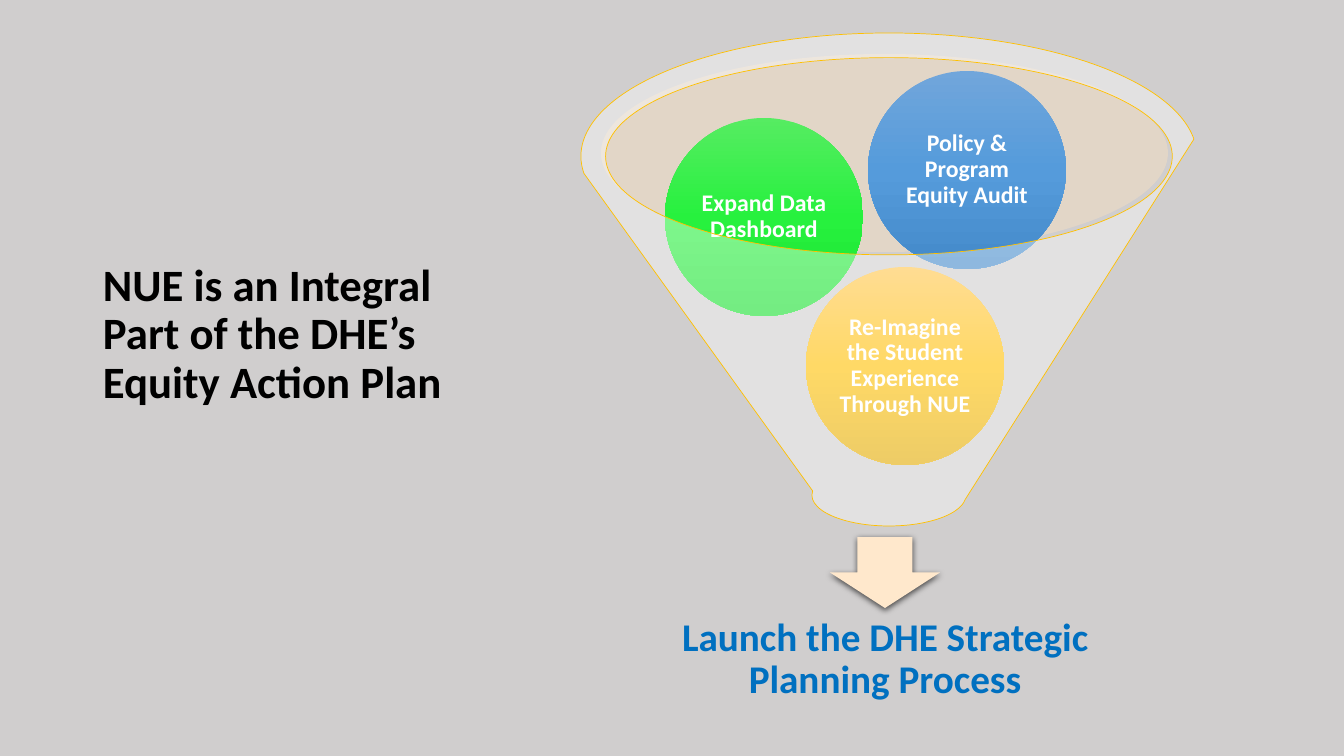
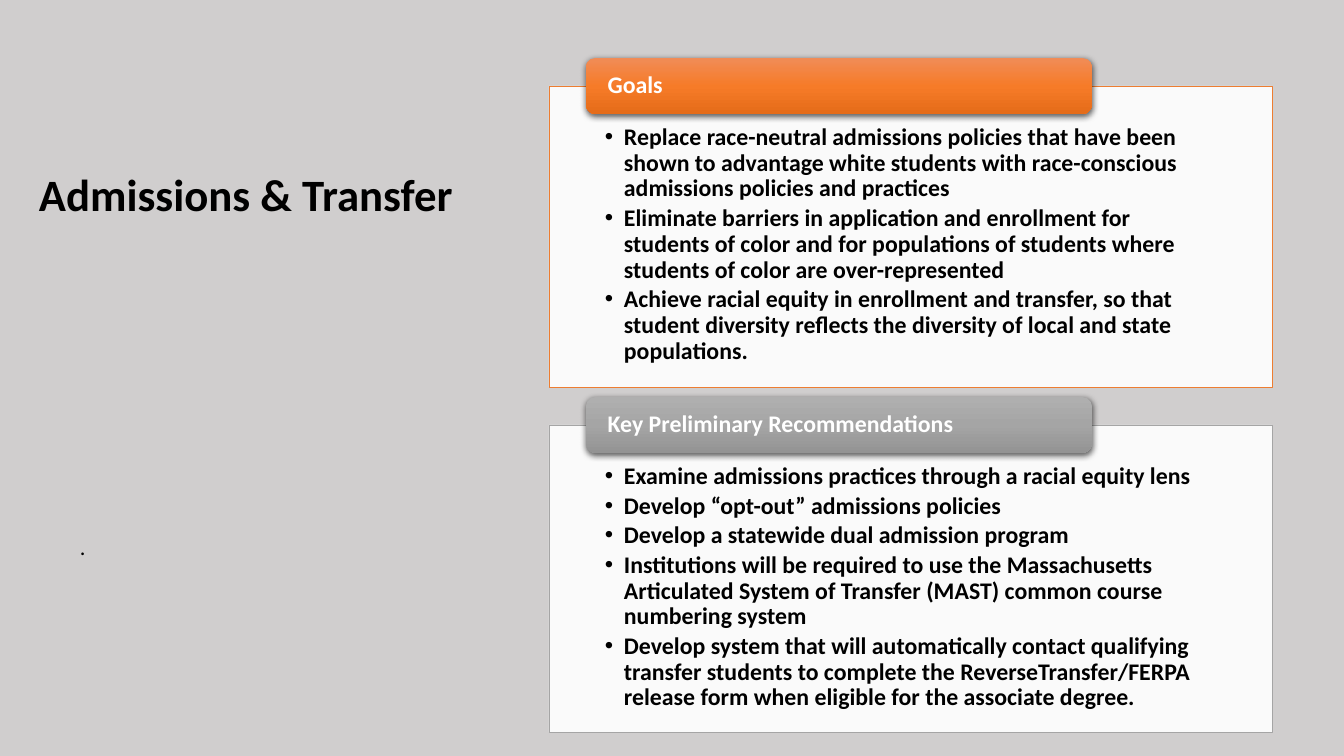
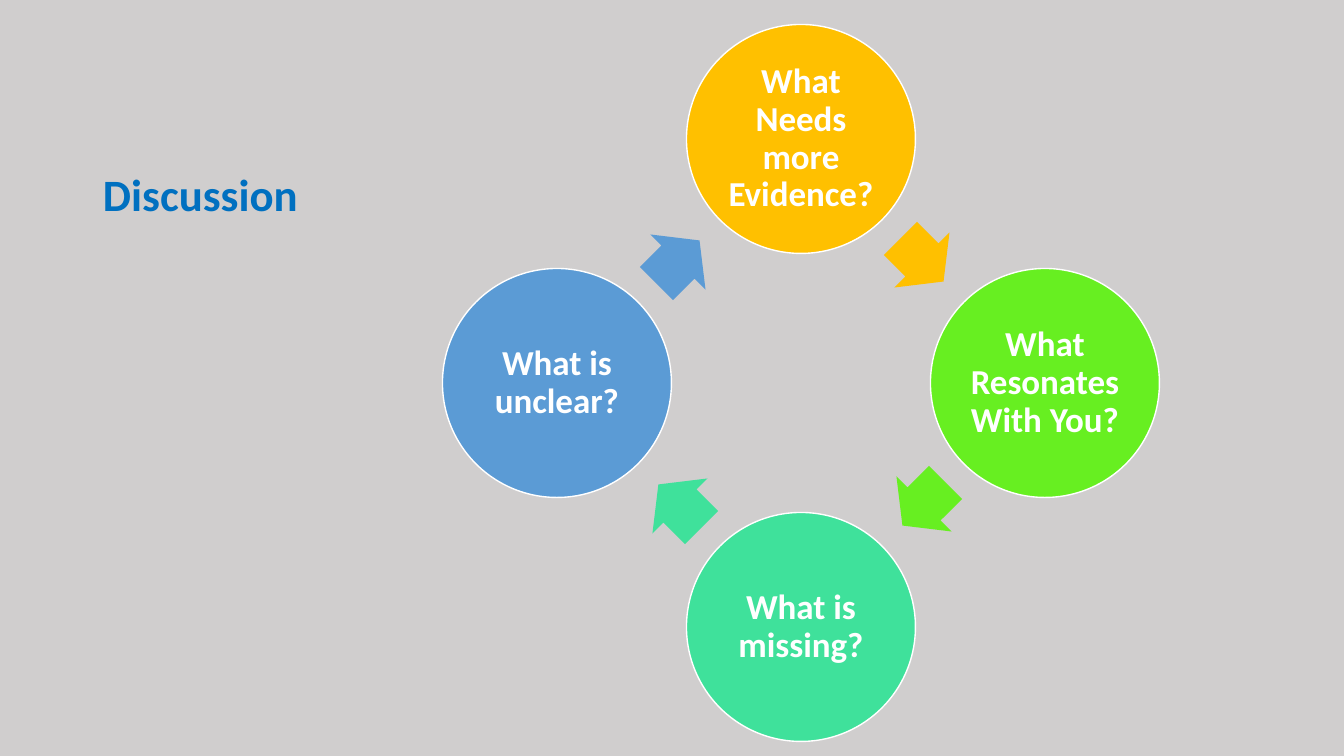
"""Build three slides on an equity action plan: a funnel, two panels and a cycle."""
import copy

import pptx
import pptx.dml.color
import pptx.enum.shapes
import pptx.enum.text
import pptx.oxml
import pptx.oxml.ns
import pptx.util
from lxml import etree

SHAPE = pptx.enum.shapes.MSO_SHAPE
ALIGN = pptx.enum.text.PP_ALIGN
ANCHOR = pptx.enum.text.MSO_ANCHOR
Pt = pptx.util.Pt

WIDTH, HEIGHT = 1344, 756
SCALE = 12192000 / WIDTH
FONT = "Calibri"
BACKDROP, BLACK, WHITE, BLUE, AMBER = "D0CECE", "000000", "FFFFFF", "0070C0", "FFC000"

FUNNEL_TITLE = "NUE is an Integral Part of the DHE’s Equity Action Plan"
FUNNEL_RESULT = "Launch the DHE Strategic Planning Process"
BALL = 198
BALLS = [
    ("Re-Imagine the Student Experience Through NUE", 806, 267, ("FFC64B", "FFC000", "E3AB00")),
    ("Expand Data Dashboard", 665, 118, ("56EC62", "27F13E", "18E02F")),
    ("Policy & Program Equity Audit", 868, 71, ("71A6DB", "559BDB", "448ACA")),
]

PANELS_TITLE = "Admissions & Transfer"
PANELS = [
    dict(heading="Goals", top=86, height=301, line="ED7D31",
         tab=("F18C57", "F67B28", "E56C19"), items=[
             "Replace race-neutral admissions policies that have been shown to advantage white "
             "students with race-conscious admissions policies and practices",
             "Eliminate barriers in application and enrollment for students of color and for "
             "populations of students where students of color are over-represented",
             "Achieve racial equity in enrollment and transfer, so that student diversity "
             "reflects the diversity of local and state populations.",
         ]),
    dict(heading="Key Preliminary Recommendations", top=425, height=307, line="A5A5A5",
         tab=("AFAFAF", "A5A5A5", "939393"), items=[
             "Examine admissions practices through a racial equity lens",
             "Develop “opt-out” admissions policies",
             "Develop a statewide dual admission program",
             "Institutions will be required to use the Massachusetts Articulated System of "
             "Transfer (MAST) common course numbering system",
             "Develop system that will automatically contact qualifying transfer students to "
             "complete the ReverseTransfer/FERPA release form when eligible for the associate "
             "degree.",
         ]),
]

CYCLE_TITLE = "Discussion"
QUESTIONS = [
    ("What Needs more Evidence?", AMBER),
    ("What Resonates With You?", "67EF21"),
    ("What is missing?", "3FE19B"),
    ("What is unclear?", "5B9BD5"),
]


def px(n):
    return round(n * SCALE)


def rgb(color):
    return pptx.dml.color.RGBColor.from_string(color)


def child(parent, tag, **attrs):
    node = etree.SubElement(parent, pptx.oxml.ns.qn(tag))
    for key, value in attrs.items():
        node.set(key, str(value))
    return node


def write(sp, paragraphs, size=17, color=WHITE, bold=True, align=ALIGN.LEFT,
          anchor=ANCHOR.MIDDLE, inset=(10, 5, 10, 5), bullet=False):
    tf = sp.text_frame
    tf.word_wrap = True
    tf.vertical_anchor = anchor
    tf.margin_left, tf.margin_top, tf.margin_right, tf.margin_bottom = map(px, inset)
    for i, text in enumerate(paragraphs):
        p = tf.add_paragraph() if i else tf.paragraphs[0]
        p.alignment = align
        p.line_spacing = 0.9
        if bullet:
            p.space_after = Pt(2.8)
            ppr = p._p.get_or_add_pPr()
            ppr.set("marL", str(px(19)))
            ppr.set("indent", str(-px(19)))
            child(ppr, "a:buFont", typeface="Arial")
            child(ppr, "a:buChar", char="•")
        r = p.add_run()
        r.text = text
        r.font.name, r.font.size, r.font.bold = FONT, Pt(size), bold
        r.font.color.rgb = rgb(color)


def box(s, at, text, **style):
    sp = s.shapes.add_textbox(*map(px, at))
    write(sp, [text], **style)


def draw(s, kind, at, fill, opacity=100, line=None, weight=0.5, shadow=False):
    """Add a shape; a tuple of colours as fill makes a gradient from top to bottom."""
    sp = s.shapes.add_shape(kind, *map(px, at))
    sp.shadow.inherit = False
    if isinstance(fill, tuple):
        sp.fill.gradient()
        sp.fill.gradient_angle = 270
        stops = sp._element.xpath("p:spPr/a:gradFill/a:gsLst")[0]
        stops.append(copy.deepcopy(stops[0]))
        for i, (stop, color) in enumerate(zip(sp.fill.gradient_stops, fill)):
            stop.position = i / 2
            stop.color.rgb = rgb(color)
    else:
        sp.fill.solid()
        sp.fill.fore_color.rgb = rgb(fill)
        if opacity < 100:
            solid = sp._element.xpath("p:spPr/a:solidFill/a:srgbClr")[0]
            child(solid, "a:alpha", val=opacity * 1000)
    if line:
        sp.line.color.rgb = rgb(line)
        sp.line.width = Pt(weight)
    else:
        sp.line.fill.background()
    if shadow:
        effects = sp._element.xpath("p:spPr/a:effectLst")[0]
        outer = child(effects, "a:outerShdw", blurRad=Pt(4.5), dist=Pt(1.5),
                      dir=5400000, algn="ctr", rotWithShape=0)
        child(child(outer, "a:srgbClr", val=BLACK), "a:alpha", val=63000)
    return sp


def new_slide(prs, title, left=93, height=176, color=BLACK):
    s = prs.slides.add_slide(prs.slide_layouts[6])
    box(s, (left, 50, 526 - left, height), title, size=32, color=color, anchor=ANCHOR.BOTTOM)
    return s


def funnel_slide(prs):
    s = new_slide(prs, FUNNEL_TITLE, height=363)
    draw(s, SHAPE.OVAL, (601, 54, 567, 198), "FFE2BD", opacity=40)
    draw(s, SHAPE.DOWN_ARROW, (830, 537, 110, 71), "FFE8CC", shadow=True)
    box(s, (621, 594, 528, 132), FUNNEL_RESULT, size=28, color=BLUE,
        align=ALIGN.CENTER, inset=[22] * 4)
    for text, left, top, colors in BALLS:
        ball = draw(s, SHAPE.OVAL, (left, top, BALL, BALL), colors)
        write(ball, [text], align=ALIGN.CENTER, inset=[2] * 4)
    draw(s, SHAPE.FUNNEL, (581, 33, 616, 493), WHITE, opacity=40, line=AMBER)


def panels_slide(prs):
    s = new_slide(prs, PANELS_TITLE, left=29)
    for panel in PANELS:
        top = panel["top"]
        body = draw(s, SHAPE.RECTANGLE, (549, top, 723, panel["height"]), WHITE,
                    opacity=90, line=panel["line"])
        write(body, panel["items"], color=BLACK, anchor=ANCHOR.TOP,
              inset=(56, 39, 56, 13), bullet=True)
        tab = draw(s, SHAPE.ROUNDED_RECTANGLE, (586, top - 28, 506, 56), panel["tab"], shadow=True)
        write(tab, [panel["heading"]], inset=(19, 0, 19, 0))
    box(s, (70, 531, 392, 116), ".", size=16, color=BLACK, bold=False, anchor=ANCHOR.TOP)


def cycle_slide(prs):
    s = new_slide(prs, CYCLE_TITLE, color=BLUE)
    cx, cy, disc, arrow_w, arrow_h = 801, 383, 229, 61, 78
    disc_x, disc_y, arrow_x, arrow_y = 0, -244, 121, -123
    for i, (text, color) in enumerate(QUESTIONS):
        at = (cx + disc_x - disc / 2, cy + disc_y - disc / 2, disc, disc)
        circle = draw(s, SHAPE.OVAL, at, color, line=WHITE, weight=1)
        write(circle, [text], size=25, align=ALIGN.CENTER, inset=[3] * 4)
        at = (cx + arrow_x - arrow_w / 2, cy + arrow_y - arrow_h / 2, arrow_w, arrow_h)
        arrow = draw(s, SHAPE.RIGHT_ARROW, at, color)
        arrow.adjustments[0], arrow.adjustments[1] = 0.6, 0.5
        arrow.rotation = 45 + 90 * i
        disc_x, disc_y = -disc_y, disc_x
        arrow_x, arrow_y = -arrow_y, arrow_x


def main():
    prs = pptx.Presentation()
    prs.slide_width, prs.slide_height = px(WIDTH), px(HEIGHT)
    backdrop = prs.slide_master.background.fill
    backdrop.solid()
    backdrop.fore_color.rgb = rgb(BACKDROP)
    funnel_slide(prs)
    panels_slide(prs)
    cycle_slide(prs)
    prs.save("out.pptx")


if __name__ == "__main__":
    main()
